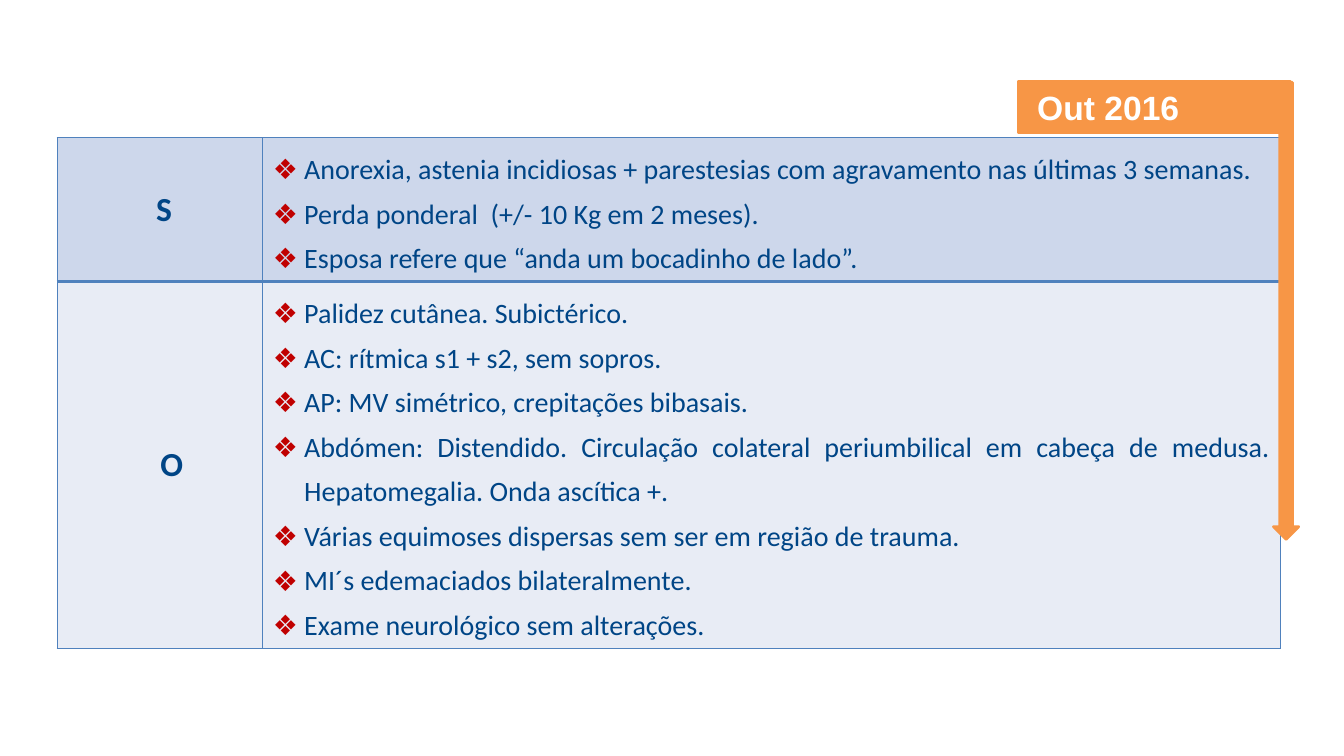
from dataclasses import dataclass

from lxml.etree import SubElement
from pptx import Presentation
from pptx.dml.color import RGBColor
from pptx.enum.shapes import MSO_SHAPE as Preset
from pptx.enum.text import MSO_ANCHOR as Anchor, PP_ALIGN as Align
from pptx.oxml.ns import qn
from pptx.util import Inches, Pt


@dataclass(frozen=True)
class Theme:
    """Colours, fonts and type sizes of the slide."""
    ink: str = "004586"
    accent: str = "F79646"
    on_accent: str = "FFFFFF"
    bullet: str = "C00000"
    rule: str = "4F81BD"
    subjective: str = "CDD7EB"
    objective: str = "E8ECF5"
    body: str = "Calibri"
    label: str = "Arial"
    large: int = 24
    normal: int = 20


THEME = Theme()
COLUMNS, ROWS = 16, 9
INDENT = Inches(0.31)
MARGIN = Inches(0.1)

SYMPTOMS = [
    "Anorexia, astenia incidiosas + parestesias com agravamento nas últimas 3 semanas.",
    "Perda ponderal  (+/- 10 Kg em 2 meses).",
    "Esposa refere que “anda um bocadinho de lado”.",
]
FINDINGS = [
    "Palidez cutânea. Subictérico.",
    "AC: rítmica s1 + s2, sem sopros.",
    "AP: MV simétrico, crepitações bibasais.",
    "Abdómen: Distendido. Circulação colateral periumbilical em cabeça de medusa. "
    "Hepatomegalia. Onda ascítica +.",
    "Várias equimoses dispersas sem ser em região de trauma.",
    "MI´s edemaciados bilateralmente.",
    "Exame neurológico sem alterações.",
]


def write(frame, lines, size=THEME.normal, font=THEME.body, color=THEME.ink,
          bold=False, align=Align.LEFT, spacing=1.0, bullet=None):
    """Write one paragraph per line into a text frame."""
    for number, line in enumerate(lines):
        paragraph = frame.add_paragraph() if number else frame.paragraphs[0]
        paragraph.alignment = align
        paragraph.line_spacing = spacing
        if bullet:
            properties = paragraph._p.get_or_add_pPr()
            properties.set("marL", str(INDENT))
            properties.set("indent", str(-INDENT))
            tint = SubElement(properties, qn("a:buClr"))
            SubElement(tint, qn("a:srgbClr"), val=THEME.bullet)
            SubElement(properties, qn("a:buFont"), typeface="Arial")
            SubElement(properties, qn("a:buChar"), char=bullet)
        run = paragraph.add_run()
        run.text = line
        run.font.size = Pt(size)
        run.font.name = font
        run.font.bold = bold
        run.font.color.rgb = RGBColor.from_string(color)


class Board:
    """A slide laid out on a grid, with its theme."""

    def __init__(self, deck, theme):
        """Add a blank slide to the deck."""
        self.theme = theme
        self.column = deck.slide_width / COLUMNS
        self.row = deck.slide_height / ROWS
        self.slide = deck.slides.add_slide(deck.slide_layouts[6])

    def place(self, left, top, width, height):
        """Turn grid columns and rows into lengths."""
        return (round(left * self.column), round(top * self.row),
                round(width * self.column), round(height * self.row))

    def shape(self, preset, box):
        """Draw a preset shape in the accent colour."""
        shape = self.slide.shapes.add_shape(preset, *self.place(*box))
        shape.shadow.inherit = False
        accent = RGBColor.from_string(self.theme.accent)
        shape.fill.solid()
        shape.fill.fore_color.rgb = accent
        shape.line.color.rgb = accent
        shape.line.width = Pt(2)
        return shape

    def banner(self, text, box):
        """Draw a labelled rectangle."""
        frame = self.shape(Preset.RECTANGLE, box).text_frame
        frame.margin_left = Inches(0.19)
        frame.vertical_anchor = Anchor.MIDDLE
        write(frame, [text], size=self.theme.large, font=self.theme.label,
              color=self.theme.on_accent, bold=True)

    def style_cell(self, cell, fill, widths):
        """Rule and fill a table cell."""
        properties = cell._tc.get_or_add_tcPr()
        for side, width in widths.items():
            edge = SubElement(properties, qn(f"a:ln{side}"), w=str(Pt(width)))
            paint = SubElement(edge, qn("a:solidFill"))
            SubElement(paint, qn("a:srgbClr"), val=self.theme.rule)
        cell.fill.solid()
        cell.fill.fore_color.rgb = RGBColor.from_string(fill)

    def record(self, box, widths, sections):
        """Draw a table with a letter and a bulleted list in each row."""
        table = self.slide.shapes.add_table(
            len(sections), len(widths), *self.place(*box)).table
        table.first_row = table.horz_banding = False
        for column, width in zip(table.columns, widths):
            column.width = round(width * self.column)
        last = len(sections) - 1
        for index, (letter, shift, height, fill, lines) in enumerate(sections):
            table.rows[index].height = round(height * self.row)
            rules = {"L": 1, "R": 1, "T": 2 if index else 1,
                     "B": 2 if index < last else 1}
            heading, details = table.rows[index].cells
            for cell in (heading, details):
                self.style_cell(cell, fill, rules)
            heading.vertical_anchor = Anchor.MIDDLE
            heading.margin_left = MARGIN + Inches(shift)
            write(heading.text_frame, [letter], size=self.theme.large,
                  bold=True, align=Align.CENTER)
            write(details.text_frame, lines, align=Align.JUSTIFY,
                  spacing=1.3, bullet="❖")


def main():
    """Build and save the slide."""
    deck = Presentation()
    deck.slide_width, deck.slide_height = Inches(13.33), Inches(7.5)
    board = Board(deck, THEME)
    board.record((0.68, 1.64, 14.56, 5.96), (2.45, 12.11), [
        ("S", 0.08, 1.7, THEME.subjective, SYMPTOMS),
        ("O", 0.23, 4.26, THEME.objective, FINDINGS),
    ])
    board.banner("Out 2016", (12.12, 0.97, 3.24, 0.61))
    board.shape(Preset.DOWN_ARROW, (15.16, 0.98, 0.3, 5.44))
    deck.save("out.pptx")


if __name__ == "__main__":
    main()
